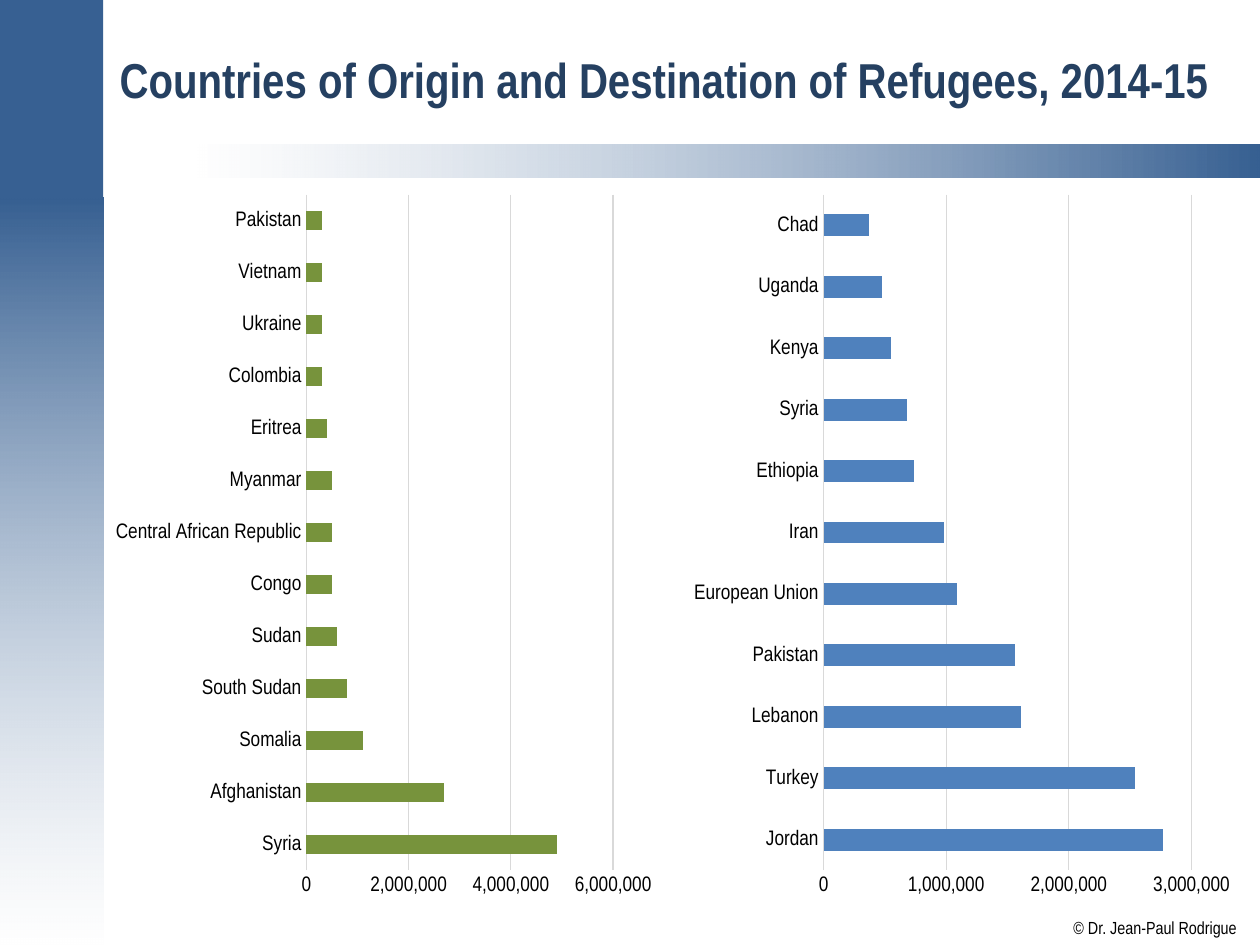
from dataclasses import dataclass

from lxml.etree import SubElement
from pptx import Presentation
from pptx.chart.data import CategoryChartData as Data
from pptx.dml.color import RGBColor as Rgb
from pptx.enum.chart import XL_CHART_TYPE as Kind, XL_TICK_MARK as Tick
from pptx.enum.shapes import MSO_SHAPE as Shape
from pptx.enum.text import MSO_ANCHOR as Anchor, PP_ALIGN as Align
from pptx.oxml.ns import qn
from pptx.util import Inches, Pt


@dataclass(frozen=True)
class Theme:
    """Hold the colours, font and type sizes."""
    face: str = "Arial Narrow"
    band: str = "376092"
    white: str = "FFFFFF"
    head: str = "254061"
    ink: str = "000000"
    grid: str = "D9D9D9"
    green: str = "77933C"
    blue: str = "4F81BD"
    title: int = 28
    axis: int = 12
    note: int = 10


THEME = Theme()
ORIGINS = {
    "Syria": 4900000, "Afghanistan": 2700000, "Somalia": 1100000,
    "South Sudan": 800000, "Sudan": 600000, "Congo": 500000,
    "Central African Republic": 500000, "Myanmar": 500000,
    "Eritrea": 400000, "Colombia": 300000, "Ukraine": 300000,
    "Vietnam": 300000, "Pakistan": 300000,
}
HOSTS = {
    "Jordan": 2770000, "Turkey": 2540000, "Lebanon": 1610000,
    "Pakistan": 1560000, "European Union": 1090000, "Iran": 980000,
    "Ethiopia": 740000, "Syria": 680000, "Kenya": 550000,
    "Uganda": 480000, "Chad": 370000,
}


def put(item, **vals):
    """Set each named value on an object."""
    for name, val in vals.items():
        setattr(item, name, val)


def style(font, size, color, bold=False):
    """Format a font."""
    put(font, name=THEME.face, size=Pt(size), bold=bold)
    font.color.rgb = Rgb.from_string(color)


def rule(line):
    """Draw a thin grey line."""
    line.color.rgb = Rgb.from_string(THEME.grid)
    line.width = Pt(0.75)


def add_band(slide, box, stops, angle=0):
    """Add a bar in one colour, or fading between (colour, opacity) stops."""
    bar = slide.shapes.add_shape(Shape.RECTANGLE, *map(Inches, box))
    bar.shadow.inherit = False
    bar.line.fill.background()
    if len(stops) == 1:
        bar.fill.solid()
        bar.fill.fore_color.rgb = Rgb.from_string(stops[0][0])
        return
    bar.fill.gradient()
    bar.fill.gradient_angle = angle
    for stop, (color, alpha) in zip(bar.fill.gradient_stops, stops):
        stop.color.rgb = Rgb.from_string(color)
    tints = bar.fill._xPr.iter(qn("a:srgbClr"))
    for tint, (color, alpha) in zip(tints, stops):
        if alpha < 100:
            SubElement(tint, qn("a:alpha")).set("val", str(alpha * 1000))


def add_frame(slide):
    """Add the side bar and the rule under the title."""
    left, wide, split = -0.01, 0.83, 1.57
    solid = (THEME.band, 100)
    add_band(slide, (left, split, wide, 7.5 - split),
             [solid, (THEME.white, 51)], 270)
    add_band(slide, (1.57, 1.15, 8.43, 0.26), [(THEME.white, 50), solid])
    add_band(slide, (left, left, wide, split - left), [solid])


def add_title(slide, box, text):
    """Fill and place the title."""
    title = slide.shapes.title
    left, top, width, height = map(Inches, box)
    put(title, left=left, top=top, width=width, height=height)
    put(title.text_frame, text=text, vertical_anchor=Anchor.MIDDLE,
        word_wrap=True)
    para = title.text_frame.paragraphs[0]
    para.alignment = Align.LEFT
    style(para.font, THEME.title, THEME.head, True)


def add_note(slide, box, text):
    """Add the copyright line."""
    frame = slide.shapes.add_textbox(*map(Inches, box)).text_frame
    put(frame, text=text, word_wrap=False, margin_left=0, margin_top=0,
        margin_right=0, margin_bottom=0)
    style(frame.paragraphs[0].font, THEME.note, THEME.ink)


def add_bars(slide, box, counts, color, top, step):
    """Add a bar chart of people by country."""
    data = Data(number_format="#,##0")
    data.categories = list(counts)
    data.add_series("Series 1", list(counts.values()))
    chart = slide.shapes.add_chart(
        Kind.BAR_CLUSTERED, *map(Inches, box), data).chart
    put(chart, has_legend=False, has_title=False)
    style(chart.font, THEME.note, THEME.ink)
    plot = chart.plots[0]
    put(plot, gap_width=182, vary_by_categories=False)
    fill = plot.series[0].format.fill
    fill.solid()
    fill.fore_color.rgb = Rgb.from_string(color)
    cat, val = chart.category_axis, chart.value_axis
    for axis in (cat, val):
        put(axis, major_tick_mark=Tick.NONE, minor_tick_mark=Tick.NONE)
        style(axis.tick_labels.font, THEME.axis, THEME.ink)
    cat.has_major_gridlines = False
    rule(cat.format.line)
    put(val, minimum_scale=0, maximum_scale=top, major_unit=step,
        has_major_gridlines=True)
    put(val.tick_labels, number_format="#,##0", number_format_is_linked=False)
    val.format.line.fill.background()
    rule(val.major_gridlines.format.line)


def main():
    """Build and save the slide."""
    deck = Presentation()
    put(deck, slide_width=Inches(10), slide_height=Inches(7.5))
    slide = deck.slides.add_slide(deck.slide_layouts[5])
    add_frame(slide)
    add_note(slide, (8.52, 7.28, 1.3, 0.17), "© Dr. Jean-Paul Rodrigue")
    add_title(slide, (0.85, 0.11, 8.98, 1.04),
              "Countries of Origin and Destination of Refugees, 2014-15")
    charts = [(0.83, ORIGINS, THEME.green, 6000000, 2000000),
              (5.42, HOSTS, THEME.blue, 3000000, 1000000)]
    for left, *rest in charts:
        add_bars(slide, (left, 1.43, 4.43, 5.79), *rest)
    deck.save("out.pptx")


if __name__ == "__main__":
    main()
